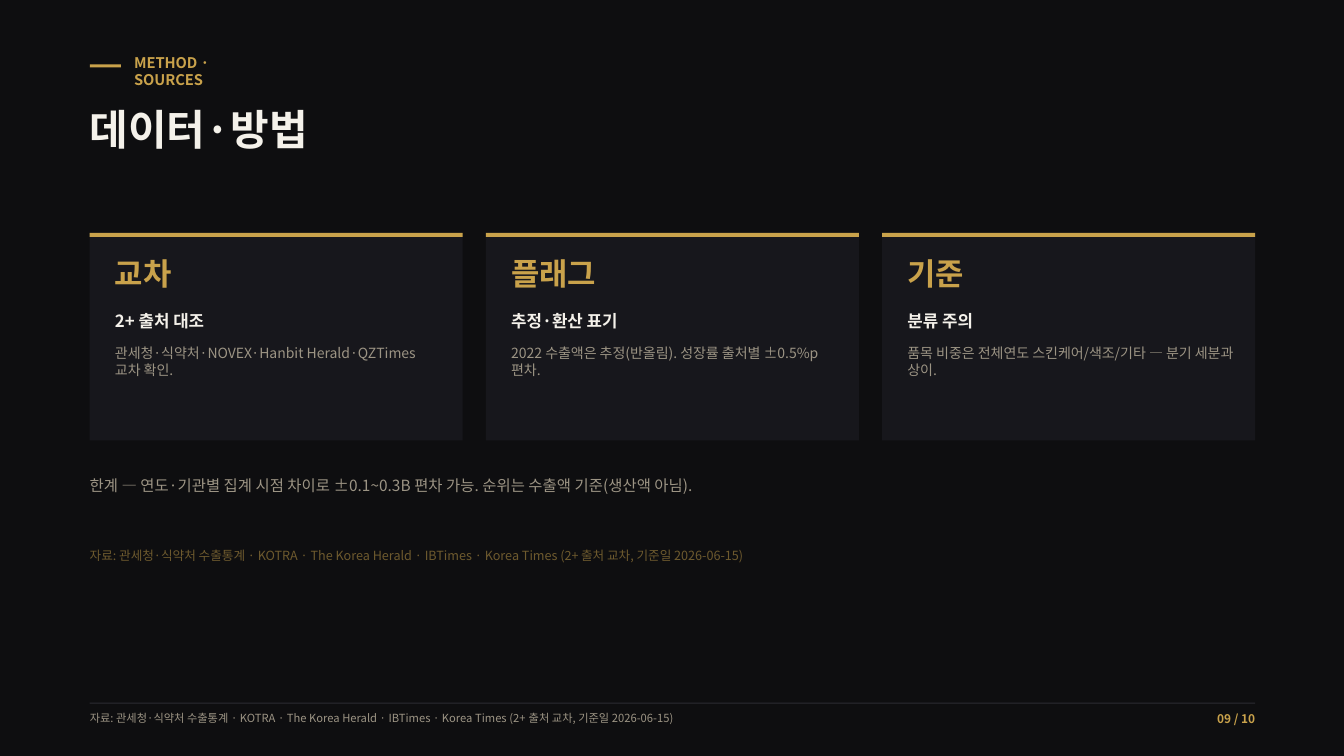
import pptx
import pptx.dml.color
import pptx.enum.shapes
import pptx.enum.text
import pptx.oxml
import pptx.oxml.ns
import pptx.util

Inches = pptx.util.Inches
ALIGN = pptx.enum.text.PP_ALIGN

KICKER = "METHOD · SOURCES"
TITLE = "데이터·방법"
CARDS = [
    ("교차", "2+ 출처 대조", "관세청·식약처·NOVEX·Hanbit Herald·QZTimes 교차 확인."),
    ("플래그", "추정·환산 표기", "2022 수출액은 추정(반올림). 성장률 출처별 ±0.5%p 편차."),
    ("기준", "분류 주의", "품목 비중은 전체연도 스킨케어/색조/기타 — 분기 세분과 상이."),
]
LIMITS = "한계 — 연도·기관별 집계 시점 차이로 ±0.1~0.3B 편차 가능. 순위는 수출액 기준(생산액 아님)."
SOURCES = ("자료: 관세청·식약처 수출통계 · KOTRA · The Korea Herald · IBTimes · "
           "Korea Times (2+ 출처 교차, 기준일 2026-06-15)")
PAGE_NUMBER = "09 / 10"

FONT = "Noto Sans CJK KR"
COLORS = {
    "background": "0E0E10", "gold": "C9A24B", "ivory": "F4F1EA", "card": "17171C",
    "muted": "9C9484", "dim gold": "6E5A2E", "rule": "2C2C32",
}

MARGIN = 0.89
CONTENT_W = 11.56
CARD_TOP, CARD_W, CARD_H = 2.31, 3.7, 2.06
CARD_STEP = (CONTENT_W - CARD_W) / (len(CARDS) - 1)
CARD_PAD = 0.25
CARD_TEXT_W = 3.26
FOOTER_TOP = 7.06
PAGE_W = 0.97


def rgb(color):
    return pptx.dml.color.RGBColor.from_string(COLORS[color])


def add_bar(slide, left, top, width, height, color):
    bar = slide.shapes.add_shape(
        pptx.enum.shapes.MSO_SHAPE.RECTANGLE,
        Inches(left), Inches(top), Inches(width), Inches(height))
    bar.shadow.inherit = False
    bar.fill.solid()
    bar.fill.fore_color.rgb = rgb(color)
    bar.line.fill.background()


def write(frame, text, size, color, bold=False, align=ALIGN.LEFT, wrap=True):
    """Fill a text frame with one unpadded, top-anchored run."""
    frame.margin_left = frame.margin_right = 0
    frame.margin_top = frame.margin_bottom = 0
    frame.vertical_anchor = pptx.enum.text.MSO_ANCHOR.TOP
    frame.word_wrap = wrap
    frame.auto_size = pptx.enum.text.MSO_AUTO_SIZE.SHAPE_TO_FIT_TEXT
    paragraph = frame.paragraphs[0]
    paragraph.alignment = align
    run = paragraph.add_run()
    run.text = text
    run.font.size = pptx.util.Pt(size)
    run.font.bold = bold
    run.font.color.rgb = rgb(color)
    run.font.name = FONT
    east_asian = pptx.oxml.parse_xml(
        f'<a:ea {pptx.oxml.ns.nsdecls("a")} typeface="{FONT}"/>')
    run.font._element.find(pptx.oxml.ns.qn("a:latin")).addnext(east_asian)


def add_text(slide, left, top, width, height, *content, **style):
    box = slide.shapes.add_textbox(
        Inches(left), Inches(top), Inches(width), Inches(height))
    write(box.text_frame, *content, **style)


def add_card(slide, left, heading, subheading, body):
    add_bar(slide, left, CARD_TOP, CARD_W, CARD_H, "card")
    add_bar(slide, left, CARD_TOP, CARD_W, 0.04, "gold")
    text_left = left + CARD_PAD
    add_text(slide, text_left, 2.53, CARD_TEXT_W, 0.37, heading, 22, "gold", bold=True)
    add_text(slide, text_left, 3.08, CARD_TEXT_W, 0.2, subheading, 12, "ivory", bold=True)
    add_text(slide, text_left, 3.42, CARD_TEXT_W, 0.34, body, 10, "muted")


def main():
    deck = pptx.Presentation()
    deck.slide_width, deck.slide_height = Inches(13.33), Inches(7.5)
    slide = deck.slides.add_slide(deck.slide_layouts[5])
    slide.background.fill.solid()
    slide.background.fill.fore_color.rgb = rgb("background")

    add_bar(slide, MARGIN, 0.64, 0.31, 0.03, "gold")
    add_text(slide, 1.33, 0.53, 1.45, 0.18, KICKER, 10.5, "gold", bold=True, wrap=False)
    title = slide.shapes.title
    title.left, title.top = Inches(MARGIN), Inches(1.03)
    title.width, title.height = Inches(CONTENT_W), Inches(0.5)
    write(title.text_frame, TITLE, 30, "ivory", bold=True)

    for index, card in enumerate(CARDS):
        add_card(slide, MARGIN + index * CARD_STEP, *card)

    add_text(slide, MARGIN, 4.72, CONTENT_W, 0.19, LIMITS, 11, "muted")
    add_text(slide, MARGIN, 5.44, CONTENT_W, 0.15, SOURCES, 9, "dim gold")

    add_bar(slide, MARGIN, 6.97, CONTENT_W, 0.01, "rule")
    add_text(slide, MARGIN, FOOTER_TOP, CONTENT_W - PAGE_W, 0.13, SOURCES, 8, "muted")
    add_text(slide, MARGIN + CONTENT_W - PAGE_W, FOOTER_TOP, PAGE_W, 0.14,
             PAGE_NUMBER, 8.5, "gold", bold=True, align=ALIGN.RIGHT)

    deck.save("out.pptx")


if __name__ == "__main__":
    main()
